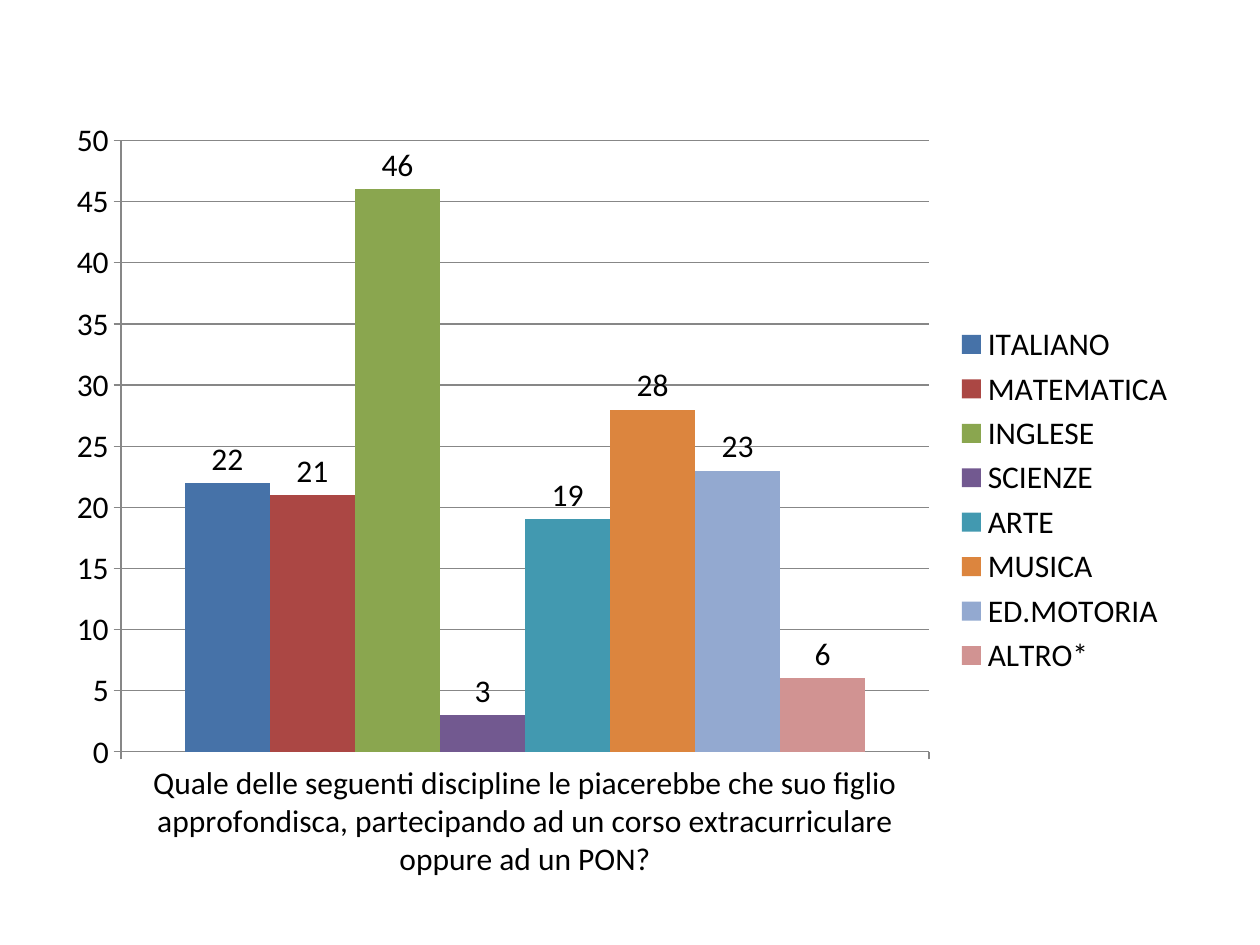
from dataclasses import dataclass

from pptx import Presentation
from pptx.chart.chart import Chart
from pptx.chart.data import CategoryChartData
from pptx.dml.color import RGBColor
from pptx.dml.line import LineFormat
from pptx.enum.chart import (
    XL_CHART_TYPE,
    XL_LABEL_POSITION,
    XL_LEGEND_POSITION,
    XL_TICK_MARK,
)
from pptx.util import Cm, Pt

CLUSTERED = XL_CHART_TYPE.COLUMN_CLUSTERED
LABEL_ABOVE = XL_LABEL_POSITION.OUTSIDE_END
LEGEND_RIGHT = XL_LEGEND_POSITION.RIGHT
TICK_OUTSIDE = XL_TICK_MARK.OUTSIDE
TICK_NONE = XL_TICK_MARK.NONE
BLANK_LAYOUT = 6


@dataclass(frozen=True)
class Theme:
    font: str = "Calibri"
    text_size: int = 18
    text_color: str = "000000"
    line_color: str = "878787"
    line_width: float = 0.75


@dataclass(frozen=True)
class Discipline:
    name: str
    votes: int
    color: str


THEME = Theme()
QUESTION = (
    "Quale delle seguenti discipline le piacerebbe che suo figlio "
    "approfondisca, partecipando ad un corso extracurriculare oppure ad un PON?"
)
DISCIPLINES = [
    Discipline("ITALIANO", 22, "4672A8"),
    Discipline("MATEMATICA", 21, "AB4744"),
    Discipline("INGLESE", 46, "8AA64F"),
    Discipline("SCIENZE", 3, "725990"),
    Discipline("ARTE", 19, "4299B0"),
    Discipline("MUSICA", 28, "DC853E"),
    Discipline("ED.MOTORIA", 23, "93A9D0"),
    Discipline("ALTRO*", 6, "D19392"),
]


def apply_format(target: object, values: dict[str, object]) -> None:
    for name, value in values.items():
        setattr(target, name, value)


def style_line(line: LineFormat) -> None:
    line.color.rgb = RGBColor.from_string(THEME.line_color)
    line.width = Pt(THEME.line_width)


def style_axes(chart: Chart) -> None:
    ticks = {"major_tick_mark": TICK_OUTSIDE, "minor_tick_mark": TICK_NONE}
    scale = {
        "minimum_scale": 0,
        "maximum_scale": 50,
        "major_unit": 5,
        "has_major_gridlines": True,
    }
    apply_format(chart.category_axis, ticks)
    apply_format(chart.value_axis, ticks | scale)
    for part in (chart.category_axis, chart.value_axis, chart.value_axis.major_gridlines):
        style_line(part.format.line)


def style_columns(chart: Chart, disciplines: list[Discipline]) -> None:
    plot = chart.plots[0]
    apply_format(plot, {"gap_width": 150, "overlap": 0, "vary_by_categories": False})
    for series, discipline in zip(plot.series, disciplines):
        series.invert_if_negative = False
        series.format.fill.solid()
        series.format.fill.fore_color.rgb = RGBColor.from_string(discipline.color)
        apply_format(series.data_labels, {"show_value": True, "position": LABEL_ABOVE})


def add_survey_chart(slide, disciplines: list[Discipline]) -> None:
    chart_data = CategoryChartData()
    chart_data.categories = [QUESTION]
    for discipline in disciplines:
        chart_data.add_series(discipline.name, [discipline.votes])
    chart = slide.shapes.add_chart(
        CLUSTERED, Cm(1.09), Cm(2.13), Cm(22.86), Cm(15.9), chart_data
    ).chart
    apply_format(chart, {"has_title": False, "has_legend": True})
    apply_format(chart.font, {"name": THEME.font, "size": Pt(THEME.text_size)})
    chart.font.color.rgb = RGBColor.from_string(THEME.text_color)
    apply_format(chart.legend, {"position": LEGEND_RIGHT, "include_in_layout": False})
    style_axes(chart)
    style_columns(chart, disciplines)


def main() -> None:
    presentation = Presentation()
    apply_format(presentation, {"slide_width": Cm(25.4), "slide_height": Cm(19.05)})
    slide = presentation.slides.add_slide(presentation.slide_layouts[BLANK_LAYOUT])
    add_survey_chart(slide, DISCIPLINES)
    presentation.save("out.pptx")


if __name__ == "__main__":
    main()
